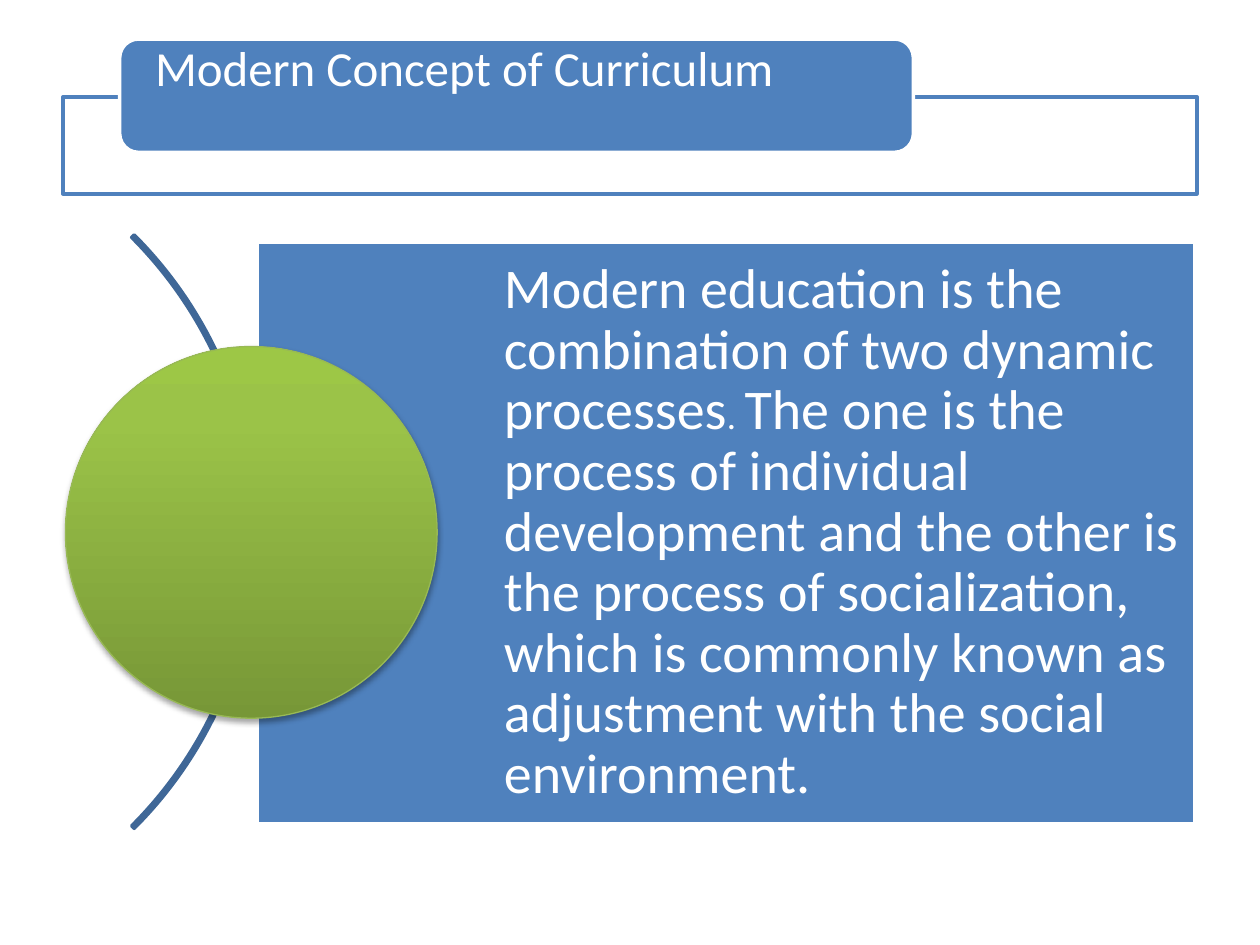
from dataclasses import dataclass

import pptx
import pptx.dml.color
import pptx.enum.shapes
import pptx.enum.text
import pptx.oxml
import pptx.oxml.ns
import pptx.util
from lxml import etree

Pt = pptx.util.Pt
Preset = pptx.enum.shapes.MSO_SHAPE
Align = pptx.enum.text.PP_ALIGN
Anchor = pptx.enum.text.MSO_ANCHOR
qn = pptx.oxml.ns.qn

BLUE = "4F81BD"
DARK_BLUE = "3F6797"
GREEN = "98B955"
WHITE = "FFFFFF"
FONT = "Calibri"
CIRCLE_STOPS = [(0, "779737"), (80, "9BC348"), (100, "9DC746")]
BODY_RUNS = [
    ("Modern education is the combination of two dynamic processes", 32),
    (". ", 21),
    ("The one is the process of individual development and the other is "
     "the process of socialization, which is commonly known as adjustment "
     "with the social environment.", 32),
]


@dataclass
class Block:
    preset: int
    left: float
    top: float
    width: float
    height: float
    line: str
    fill: str | None = None
    line_width: float = 2


HEADER_FRAME = Block(Preset.RECTANGLE, 36, 55.4, 648, 55.4, BLUE, WHITE)
HEADER_TAB = Block(Preset.ROUNDED_RECTANGLE, 68.4, 22.3, 453.6, 64.8, WHITE, BLUE)
ARC = Block(Preset.BLOCK_ARC, -332.6, 64.1, 479.5, 479.5, DARK_BLUE)
BODY_PANEL = Block(Preset.RECTANGLE, 146.9, 138.2, 535.7, 332.6, WHITE, BLUE)
CIRCLE = Block(Preset.OVAL, 37.4, 198, 212.4, 212.4, GREEN, GREEN, 0.75)


def rgb(value: str) -> pptx.dml.color.RGBColor:
    return pptx.dml.color.RGBColor.from_string(value)


def draw_block(slide, block: Block):
    shape = slide.shapes.add_shape(
        block.preset, Pt(block.left), Pt(block.top), Pt(block.width), Pt(block.height))
    shape.shadow.inherit = False
    if block.fill is None:
        shape.fill.background()
    else:
        shape.fill.solid()
        shape.fill.fore_color.rgb = rgb(block.fill)
    shape.line.color.rgb = rgb(block.line)
    shape.line.width = Pt(block.line_width)
    return shape


def add_color(parent, color: str, alpha: int = 100) -> None:
    element = etree.SubElement(parent, qn("a:srgbClr"), val=color)
    if alpha < 100:
        etree.SubElement(element, qn("a:alpha"), val=str(alpha * 1000))


def set_gradient(shape, stops: list[tuple[int, str]]) -> None:
    """Fill the shape with stops that run from its bottom to its top."""
    shape.fill.gradient()
    shape.fill.gradient_angle = 90
    stop_list = shape.element.spPr.find(".//" + qn("a:gsLst"))
    for old_stop in list(stop_list):
        stop_list.remove(old_stop)
    for position, color in stops:
        stop = etree.SubElement(stop_list, qn("a:gs"), pos=str(position * 1000))
        add_color(stop, color)


def add_shadow(shape, blur: float, distance: float, alpha: int) -> None:
    """Add a black shadow that falls straight down."""
    effects = shape.element.spPr.find(qn("a:effectLst"))
    shadow = etree.SubElement(
        effects, qn("a:outerShdw"), blurRad=str(Pt(blur)), dist=str(Pt(distance)),
        dir="5400000", rotWithShape="0")
    add_color(shadow, "000000", alpha)


def write_text(shape, runs: list[tuple[str, float]], anchor,
               margins: tuple[float, float, float, float]) -> None:
    """Write one left-aligned paragraph; margins are left, top, right, bottom."""
    frame = shape.text_frame
    frame.word_wrap = True
    frame.auto_size = pptx.enum.text.MSO_AUTO_SIZE.NONE
    frame.vertical_anchor = anchor
    (frame.margin_left, frame.margin_top,
     frame.margin_right, frame.margin_bottom) = map(Pt, margins)
    paragraph = frame.paragraphs[0]
    paragraph.alignment = Align.LEFT
    paragraph.line_spacing = 0.9
    for text, size in runs:
        run = paragraph.add_run()
        run.text = text
        run.font.name = FONT
        run.font.size = Pt(size)
        run.font.color.rgb = rgb(WHITE)


def draw_header(slide) -> None:
    frame = draw_block(slide, HEADER_FRAME)
    frame_color = frame.element.spPr.find(qn("a:solidFill")).find(qn("a:srgbClr"))
    etree.SubElement(frame_color, qn("a:alpha"), val="90000")
    tab = draw_block(slide, HEADER_TAB)

    title = slide.shapes.title
    title.left, title.top = Pt(71.3), Pt(25.4)
    title.width, title.height = Pt(447.1), Pt(59)
    write_text(title, [("Modern Concept of Curriculum", 28)], Anchor.TOP, (17.3, 0, 17.3, 0))
    tab.element.addnext(title.element)


def draw_body(slide) -> None:
    arc = draw_block(slide, ARC)
    arc.adjustments[0] = 189
    arc.adjustments[1] = 27
    arc.adjustments[2] = 2 / ARC.width

    panel = draw_block(slide, BODY_PANEL)
    write_text(panel, BODY_RUNS, Anchor.MIDDLE, (141.1, 6.4, 6.4, 6.4))

    circle = draw_block(slide, CIRCLE)
    set_gradient(circle, CIRCLE_STOPS)
    add_shadow(circle, blur=3.1, distance=1.8, alpha=35)


def main() -> None:
    presentation = pptx.Presentation()
    presentation.slide_width = Pt(720)
    presentation.slide_height = Pt(540)
    slide = presentation.slides.add_slide(presentation.slide_layouts[5])
    draw_header(slide)
    draw_body(slide)
    presentation.save("out.pptx")


if __name__ == "__main__":
    main()
